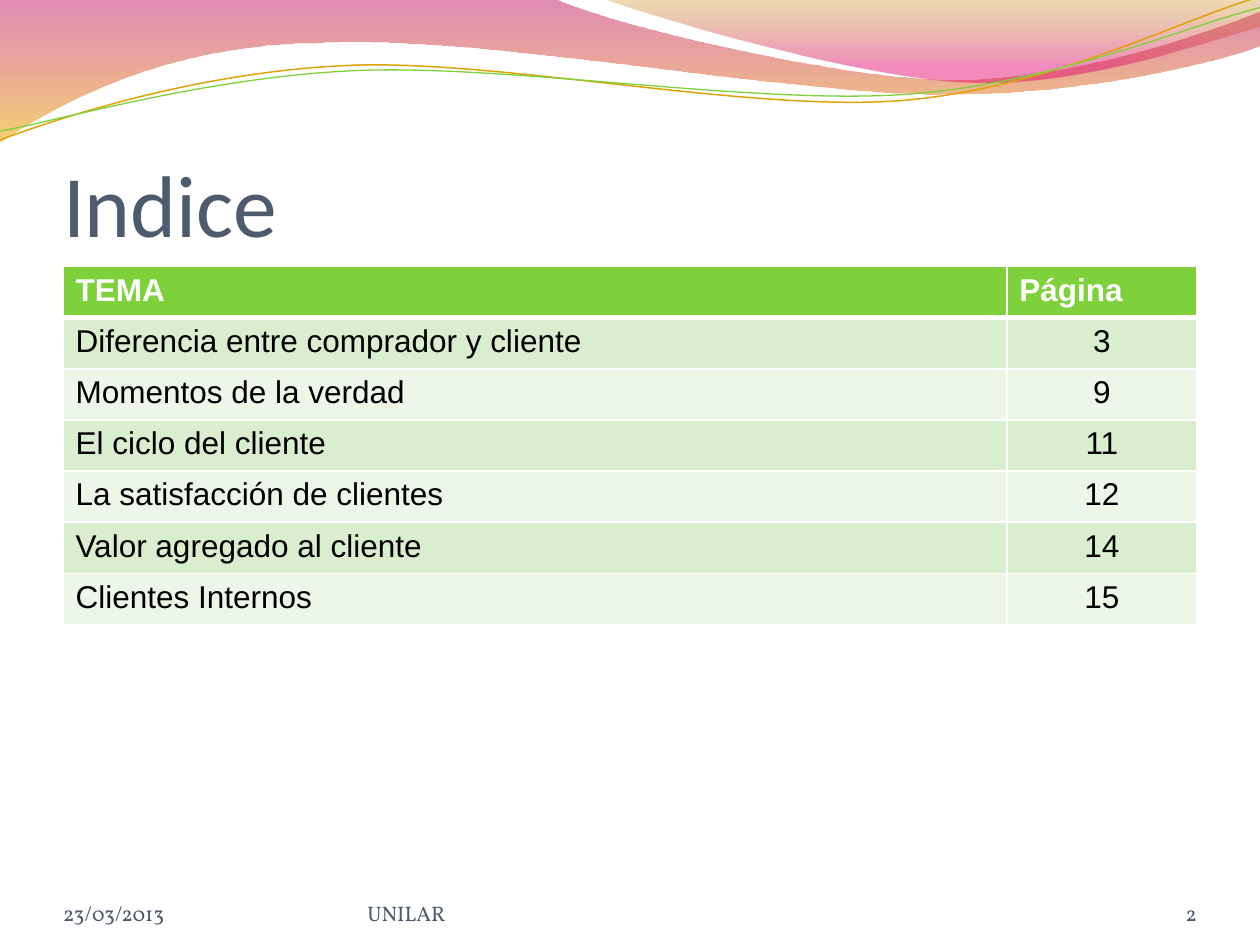
from pptx import Presentation, util as u
from pptx.dml.color import RGBColor
from pptx.enum import text
from pptx.oxml.ns import qn
from lxml import etree

Pt = u.Pt
AL = text.PP_ALIGN
THEME = {
    "title": ("Calibri", 50, "4E5B6F"),
    "head": ("Arial", 18, "FFFFFF"),
    "body": ("Arial", 18, "000000"),
    "footer": ("Vollkorn", 12, "4B576A"),
    "head_fill": "7FD13B",
    "bands": ("D8EECE", "ECF7E8"),
    "border": "FFFFFF",
    "wave_stops": (
        [(0, "BD0059", 45), (1, "F0AB00", 55)],
        [(0, "C38B00", 30), (0.8, "E1006B", 45)],
    ),
    "lines": (("E0A209", 0.85), ("7FD13B", 0.75)),
}
TITLE = "Indice"
ROWS = [
    ("TEMA", "Página"),
    ("Diferencia entre comprador y cliente", "3"),
    ("Momentos de la verdad", "9"),
    ("El ciclo del cliente", "11"),
    ("La satisfacción de clientes", "12"),
    ("Valor agregado al cliente", "14"),
    ("Clientes Internos", "15"),
]
FOOTER = [
    ("2", 624, 60, AL.RIGHT),
    ("23/03/2013", 36, 168, AL.LEFT),
    ("UNILAR", 210, 264, AL.LEFT),
]
COLS = (539.3, 108.7)
ROW_H = 29.2
LEFT, TABLE_TOP, FOOT_TOP, FOOT_H = 36, 152.4, 500.4, 28.8
WAVES = [
    [(0, -0.7), (317, -0.7), (342.7, 12.2, 478, 45.4, 545.8, 45.4),
     (614, 45.4, 690, 18.7, 720, 6.5), (720.7, 26),
     (707.8, 31.7, 626.4, 54.7, 537, 54), (447.8, 54, 275, 20.2, 185, 24.5),
     (92.9, 25.2, 33, 59.8, -0.7, 81.4)],
    [(345, -0.7), (366.5, 8, 491, 44.6, 553.7, 46.8),
     (616.3, 49.7, 692, 23, 720, 15), (720, 0)],
]
LINES = [
    [(0, 80), (34.6, 67, 113.8, 41, 199.4, 37.4),
     (284.4, 33.8, 427, 64, 513.4, 57.6),
     (599.8, 51, 675.4, 10.8, 718.6, -1.4)],
    [(0, 74.9), (33.8, 69, 118, 44, 203.8, 40.3),
     (290, 36.7, 429.8, 59.8, 516.2, 54),
     (602, 48.2, 677.5, 15, 720, 4.3)],
]


def rgb(value):
    return RGBColor.from_string(value)


def add_path(s, segments, close):
    anchors = [(Pt(seg[-2]), Pt(seg[-1])) for seg in segments]
    builder = s.shapes.build_freeform(*anchors[0])
    builder.add_line_segments(anchors[1:], close=close)
    sp = builder.convert_to_shape()
    sp.shadow.inherit = False
    straight = list(sp._element.spPr.iter(qn("a:lnTo")))
    for step, seg in zip(straight, segments[1:]):
        if len(seg) == 6:
            step.tag_name = None
            curve = etree.Element(qn("a:cubicBezTo"))
            for x, y in zip(seg[::2], seg[1::2]):
                etree.SubElement(curve, qn("a:pt"), x=str(Pt(x) - sp.left), y=str(Pt(y) - sp.top))
            step.getparent().replace(step, curve)
    return sp


def add_wave(s, segments, stops):
    sp = add_path(s, segments, True)
    sp.line.fill.background()
    sp.fill.gradient()
    sp.fill.gradient_angle = 270
    for stop, (position, color, _) in zip(sp.fill.gradient_stops, stops):
        stop.position = position
        stop.color.rgb = rgb(color)
    for clr, (_, _, alpha) in zip(sp._element.spPr.iter(qn("a:srgbClr")), stops):
        etree.SubElement(clr, qn("a:alpha"), val=str(alpha * 1000))


def add_line(s, segments, color, width):
    sp = add_path(s, segments, False)
    sp.fill.background()
    sp.line.color.rgb = rgb(color)
    sp.line.width = Pt(width)


def write(tf, content, style, align=AL.LEFT, bold=False):
    p = tf.paragraphs[0]
    p.alignment = align
    r = p.add_run()
    r.text = content
    name, size, color = THEME[style]
    r.font.name, r.font.size, r.font.bold = name, Pt(size), bold
    r.font.color.rgb = rgb(color)


def frame(sp, top_inset=0):
    tf = sp.text_frame
    tf.word_wrap = True
    tf.auto_size = text.MSO_AUTO_SIZE.NONE
    tf.vertical_anchor = text.MSO_ANCHOR.BOTTOM
    tf.margin_left = tf.margin_right = tf.margin_bottom = 0
    tf.margin_top = Pt(top_inset)
    return tf


def set_borders(cell, top, bottom):
    tc_pr = cell._tc.get_or_add_tcPr()
    for side, width in (("L", 1), ("R", 1), ("T", top), ("B", bottom)):
        ln = etree.SubElement(tc_pr, qn(f"a:ln{side}"), w=str(Pt(width)))
        fill = etree.SubElement(ln, qn("a:solidFill"))
        etree.SubElement(fill, qn("a:srgbClr"), val=THEME["border"])


def add_index(s):
    table = s.shapes.add_table(len(ROWS), len(COLS), Pt(LEFT), Pt(TABLE_TOP),
                               Pt(sum(COLS)), Pt(ROW_H * len(ROWS))).table
    for col, width in zip(table.columns, COLS):
        col.width = Pt(width)
    for i, row in enumerate(ROWS):
        table.rows[i].height = Pt(ROW_H)
        head = i == 0
        for j, content in enumerate(row):
            cell = table.cell(i, j)
            set_borders(cell, 3 if i == 1 else 1, 3 if head else 1)
            cell.fill.solid()
            cell.fill.fore_color.rgb = rgb(THEME["head_fill"] if head else THEME["bands"][(i - 1) % 2])
            write(cell.text_frame, content, "head" if head else "body",
                  AL.CENTER if j and not head else AL.LEFT, head)


def main():
    prs = Presentation()
    prs.slide_width, prs.slide_height = Pt(720), Pt(540)
    s = prs.slides.add_slide(prs.slide_layouts[5])
    for segments, stops in zip(WAVES, THEME["wave_stops"]):
        add_wave(s, segments, stops)
    for segments, (color, width) in zip(LINES, THEME["lines"]):
        add_line(s, segments, color, width)
    title = s.shapes.title
    title.left, title.top, title.width, title.height = Pt(LEFT), Pt(55.8), Pt(648), Pt(90)
    write(frame(title, 3.6), TITLE, "title")
    add_index(s)
    for content, left, width, align in FOOTER:
        sp = s.shapes.add_textbox(Pt(left), Pt(FOOT_TOP), Pt(width), Pt(FOOT_H))
        write(frame(sp), content, "footer", align)
    prs.save("out.pptx")


if __name__ == "__main__":
    main()
